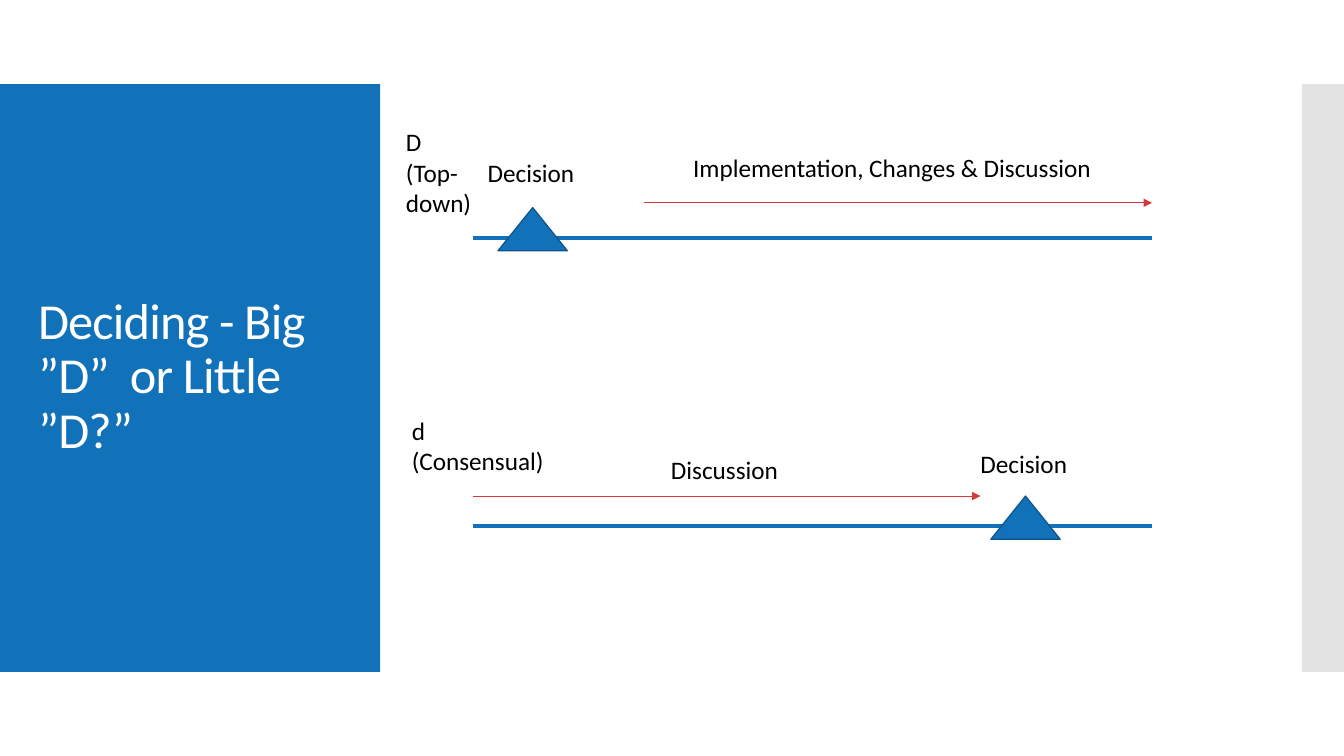
from lxml import etree
from pptx import Presentation
from pptx.dml.color import RGBColor
from pptx.enum.shapes import MSO_CONNECTOR, MSO_SHAPE
from pptx.enum.text import MSO_ANCHOR, MSO_AUTO_SIZE
from pptx.oxml.ns import qn
from pptx.util import Cm, Pt

STRAIGHT = MSO_CONNECTOR.STRAIGHT
RECTANGLE = MSO_SHAPE.RECTANGLE
TRIANGLE = MSO_SHAPE.ISOSCELES_TRIANGLE
MIDDLE = MSO_ANCHOR.MIDDLE
FIT_SHAPE = MSO_AUTO_SIZE.SHAPE_TO_FIT_TEXT

BLUE = RGBColor(0x11, 0x71, 0xB9)
DARK_BLUE = RGBColor(0x0D, 0x54, 0x89)
GREY = RGBColor(0xC8, 0xC8, 0xC8)
RED = RGBColor(0xD5, 0x39, 0x3D)
WHITE = RGBColor(0xFF, 0xFF, 0xFF)
BLACK = RGBColor(0x00, 0x00, 0x00)

FONT = "Calibri"
SLIDE_WIDTH = 33.87
PANEL_TOP, PANEL_HEIGHT = 2.12, 14.81
TIMELINE_START, TIMELINE_END = 11.91, 29.03
ARROW_LENGTH = 12.8
MARKER_WIDTH, MARKER_HEIGHT, MARKER_RISE = 1.75, 1.09, 0.76


def add_filled_shape(slide, kind, left, top, width, height, color):
    shape = slide.shapes.add_shape(kind, Cm(left), Cm(top), Cm(width), Cm(height))
    shape.shadow.inherit = False
    shape.fill.solid()
    shape.fill.fore_color.rgb = color
    shape.line.fill.background()
    return shape


def set_half_transparent(shape):
    color = shape.fill._xPr.find(qn("a:solidFill"))[0]
    etree.SubElement(color, qn("a:alpha"), val="50000")


def add_horizontal_line(slide, start, end, y, color, width):
    line = slide.shapes.add_connector(STRAIGHT, Cm(start), Cm(y), Cm(end), Cm(y))
    line.line.color.rgb = color
    line.line.width = Pt(width)
    etree.SubElement(line._element.spPr, qn("a:effectLst"))
    return line


def add_arrow(slide, start, y):
    arrow = add_horizontal_line(slide, start, start + ARROW_LENGTH, y, RED, 0.75)
    etree.SubElement(arrow.line._ln, qn("a:tailEnd"), type="triangle")


def add_marker(slide, left, timeline_y):
    """Add the triangle that marks the decision on a timeline."""
    marker = add_filled_shape(slide, TRIANGLE, left, timeline_y - MARKER_RISE,
                              MARKER_WIDTH, MARKER_HEIGHT, BLUE)
    marker.line.color.rgb = DARK_BLUE
    marker.line.width = Pt(0.85)


def add_run(paragraph, text, size, color):
    run = paragraph.add_run()
    run.text = text
    run.font.name = FONT
    run.font.size = Pt(size)
    run.font.color.rgb = color
    return run


def add_title(slide, text):
    box = slide.shapes.add_textbox(Cm(0.71), Cm(3.12), Cm(8.18), Cm(12.78))
    frame = box.text_frame
    frame.word_wrap = True
    frame.vertical_anchor = MIDDLE
    paragraph = frame.paragraphs[0]
    paragraph.line_spacing = 0.9
    run = add_run(paragraph, text, 36, WHITE)
    run._r.get_or_add_rPr().set("spc", "-60")


def add_label(slide, left, top, width, height, paragraphs):
    """Add a label; each paragraph is a list of lines joined by line breaks."""
    box = slide.shapes.add_textbox(Cm(left), Cm(top), Cm(width), Cm(height))
    frame = box.text_frame
    frame.word_wrap = False
    frame.auto_size = FIT_SHAPE
    for index, lines in enumerate(paragraphs):
        paragraph = frame.add_paragraph() if index else frame.paragraphs[0]
        for line_index, line in enumerate(lines):
            if line_index:
                paragraph.add_line_break()
            add_run(paragraph, line, 18, BLACK)


def add_timeline(slide, y, marker_left, arrow_start, arrow_y):
    add_horizontal_line(slide, TIMELINE_START, TIMELINE_END, y, BLUE, 3)
    add_marker(slide, marker_left, y)
    add_arrow(slide, arrow_start, arrow_y)


def main():
    presentation = Presentation()
    presentation.slide_width = Cm(SLIDE_WIDTH)
    presentation.slide_height = Cm(19.05)
    slide = presentation.slides.add_slide(presentation.slide_layouts[6])

    add_filled_shape(slide, RECTANGLE, 0, PANEL_TOP, 9.58, PANEL_HEIGHT, BLUE)
    side_bar = add_filled_shape(slide, RECTANGLE, 32.81, PANEL_TOP,
                                SLIDE_WIDTH - 32.81, PANEL_HEIGHT, GREY)
    set_half_transparent(side_bar)
    add_title(slide, "Deciding - Big ”D”  or Little ”D?”")

    add_timeline(slide, 5.99, 12.55, TIMELINE_END - ARROW_LENGTH, 5.11)
    add_timeline(slide, 13.26, 24.97, TIMELINE_START, 12.5)

    labels = [
        (12.04, 3.84, 2.77, 1.02, [["Decision"]]),
        (24.46, 11.18, 2.77, 1.02, [["Decision"]]),
        (17.22, 3.71, 10.82, 1.02, [["Implementation, Changes & Discussion"]]),
        (16.66, 11.33, 3.3, 1.02, [["Discussion"]]),
        (9.98, 3.07, 2.18, 2.57, [["D ", "(Top-"], ["down)"]]),
        (10.13, 10.34, 3.91, 1.8, [["d"], ["(Consensual)"]]),
    ]
    for label in labels:
        add_label(slide, *label)

    presentation.save("out.pptx")


if __name__ == "__main__":
    main()
